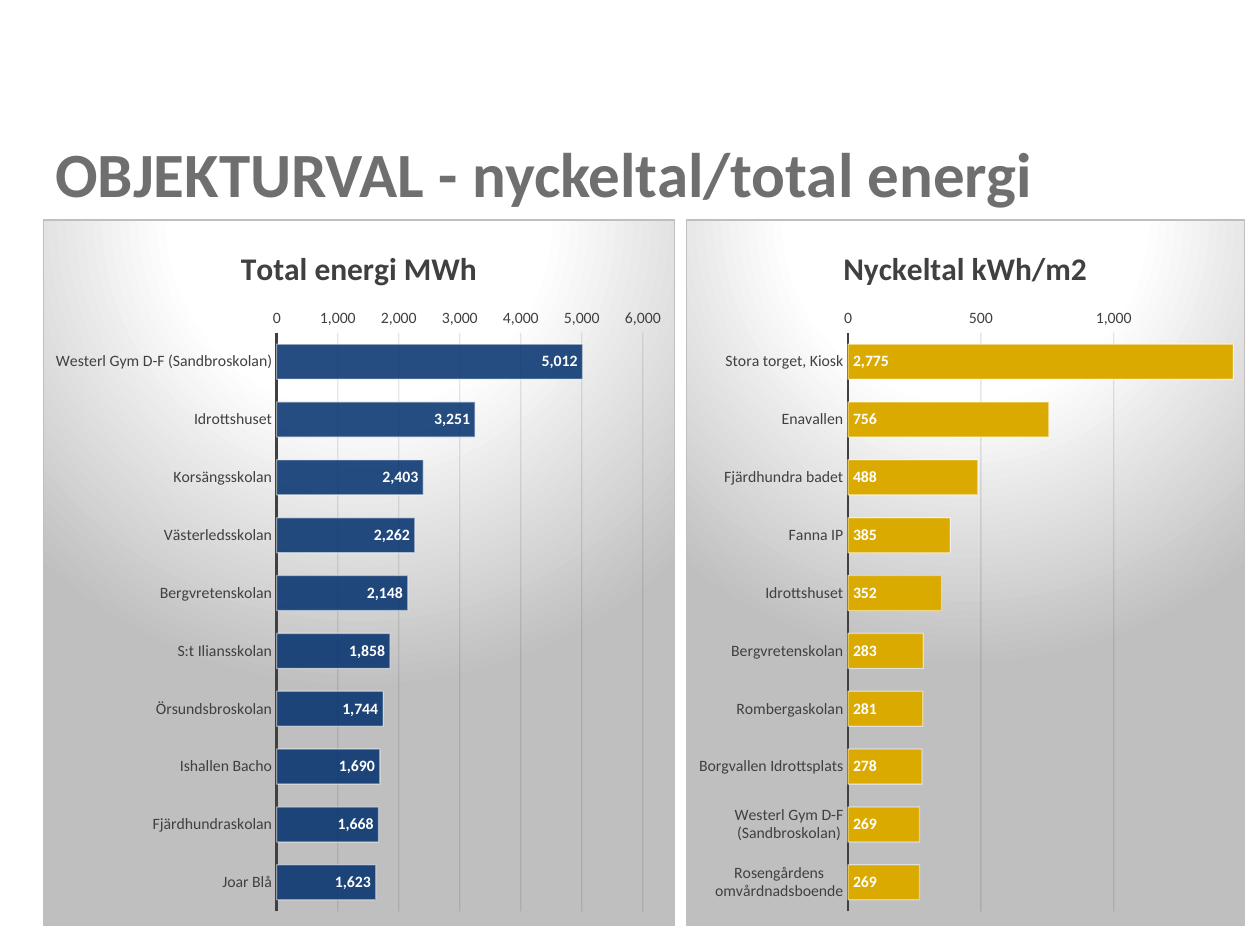
import pptx
import pptx.chart.data
import pptx.dml.color
import pptx.enum.chart
import pptx.enum.text
import pptx.oxml
import pptx.oxml.ns
import pptx.util
from lxml import etree

Cm = pptx.util.Cm
Pt = pptx.util.Pt
RGBColor = pptx.dml.color.RGBColor
qn = pptx.oxml.ns.qn

FONT = "Calibri"
TITLE_GRAY = RGBColor(0x70, 0x6F, 0x6F)
TEXT_GRAY = RGBColor(0x40, 0x40, 0x40)
GRID = RGBColor(0x0D, 0x0D, 0x0D)
PANEL_GRAY = RGBColor(0xBF, 0xBF, 0xBF)
WHITE = RGBColor(0xFF, 0xFF, 0xFF)
BLACK = RGBColor(0, 0, 0)
NAVY = RGBColor(0x00, 0x2F, 0x6C)
GOLD = RGBColor(0xDA, 0xAA, 0x00)

TOTAL_ENERGY = {
    "Westerl Gym D-F (Sandbroskolan)": 5012,
    "Idrottshuset": 3251,
    "Korsängsskolan": 2403,
    "Västerledsskolan": 2262,
    "Bergvretenskolan": 2148,
    "S:t Iliansskolan": 1858,
    "Örsundsbroskolan": 1744,
    "Ishallen Bacho": 1690,
    "Fjärdhundraskolan": 1668,
    "Joar Blå": 1623,
}
ENERGY_PER_AREA = {
    "Stora torget, Kiosk": 2775,
    "Enavallen": 756,
    "Fjärdhundra badet": 488,
    "Fanna IP": 385,
    "Idrottshuset": 352,
    "Bergvretenskolan": 283,
    "Rombergaskolan": 281,
    "Borgvallen Idrottsplats": 278,
    "Westerl Gym D-F (Sandbroskolan)": 269,
    "Rosengårdens omvårdnadsboende": 269,
}


def style_font(font, size, color, bold=False):
    font.name, font.size, font.bold = FONT, Pt(size), bold
    font.color.rgb = color


def set_alpha(color_parent, percent):
    for color in color_parent.iter(qn("a:srgbClr")):
        etree.SubElement(color, qn("a:alpha")).set("val", str(percent * 1000))


def paint_panel(chart):
    """Radial white-to-gray background with a thin border."""
    stops = "".join(
        f'<a:gs pos="{position * 1000}"><a:srgbClr val="{color}"/></a:gs>'
        for position, color in ((0, WHITE), (39, WHITE), (100, PANEL_GRAY)))
    panel = pptx.oxml.parse_xml(
        f'<c:spPr {pptx.oxml.ns.nsdecls("c", "a")}>'
        f'<a:gradFill><a:gsLst>{stops}</a:gsLst><a:path path="circle">'
        '<a:fillToRect l="50000" t="-80000" r="50000" b="180000"/></a:path></a:gradFill>'
        f'<a:ln w="{Pt(0.75)}"><a:solidFill><a:srgbClr val="{PANEL_GRAY}"/></a:solidFill></a:ln>'
        '</c:spPr>')
    chart._chartSpace.find(qn("c:chart")).addnext(panel)


def place_plot(chart, x, width, y=0.16, height=0.82):
    """Fix the inner plot area, in fractions of the chart."""
    plot_area = chart._chartSpace.find(".//" + qn("c:plotArea"))
    for old_layout in plot_area.findall(qn("c:layout")):
        plot_area.remove(old_layout)
    layout = etree.Element(qn("c:layout"))
    manual = etree.SubElement(layout, qn("c:manualLayout"))
    for tag, value in (("layoutTarget", "inner"), ("xMode", "edge"), ("yMode", "edge"),
                       ("x", x), ("y", y), ("w", width), ("h", height)):
        etree.SubElement(manual, qn(f"c:{tag}")).set("val", str(value))
    plot_area.insert(0, layout)


def add_title(slide, left, top, width, height):
    title = slide.shapes.title
    title.left, title.top, title.width, title.height = left, top, width, height
    frame = title.text_frame
    frame.text = "OBJEKTURVAL - nyckeltal/total energi"
    frame.vertical_anchor = pptx.enum.text.MSO_ANCHOR.MIDDLE
    heading = frame.paragraphs[0]
    heading.alignment = pptx.enum.text.PP_ALIGN.LEFT
    style_font(heading.font, 36, TITLE_GRAY, True)


def add_ranking(slide, box, name, values, color, label_position, plot_x, plot_width):
    data = pptx.chart.data.CategoryChartData(number_format="#,##0")
    data.categories = list(values)
    data.add_series(name, list(values.values()))
    chart = slide.shapes.add_chart(
        pptx.enum.chart.XL_CHART_TYPE.BAR_CLUSTERED, *box, data).chart
    style_font(chart.font, 10, BLACK)
    chart.has_legend = False
    paint_panel(chart)
    place_plot(chart, plot_x, plot_width)

    # Heading
    chart.has_title = True
    chart.chart_title.include_in_layout = False
    chart.chart_title.text_frame.text = name
    style_font(chart.chart_title.text_frame.paragraphs[0].font, 18, TEXT_GRAY, True)

    # Axes
    for axis in (chart.category_axis, chart.value_axis):
        axis.major_tick_mark = axis.minor_tick_mark = pptx.enum.chart.XL_TICK_MARK.NONE
        style_font(axis.tick_labels.font, 9, TEXT_GRAY)
    chart.category_axis.reverse_order = True
    chart.category_axis.format.line.color.rgb = TEXT_GRAY
    chart.category_axis.format.line.width = Pt(1.5)
    chart.value_axis.format.line.fill.background()
    chart.value_axis.tick_labels.number_format = "#,##0"
    chart.value_axis.tick_labels.number_format_is_linked = False
    grid_line = chart.value_axis.major_gridlines.format.line
    grid_line.color.rgb = GRID
    grid_line.width = Pt(0.75)
    set_alpha(chart._chartSpace.find(".//" + qn("c:majorGridlines")), 10)

    # Bars
    plot = chart.plots[0]
    plot.gap_width = 65
    plot.vary_by_categories = False
    bars = plot.series[0]
    bars.format.fill.solid()
    bars.format.fill.fore_color.rgb = color
    bars.format.line.color.rgb = WHITE
    bars.format.line.width = Pt(0.75)
    set_alpha(bars._element.find(qn("c:spPr")).find(qn("a:ln")), 50)

    # Bar values
    labels = bars.data_labels
    labels.show_value = True
    labels.position = label_position
    labels.number_format = "#,##0"
    labels.number_format_is_linked = False
    style_font(labels.font, 9, WHITE, True)
    return chart


def main():
    presentation = pptx.Presentation()
    presentation.slide_width, presentation.slide_height = Cm(25.4), Cm(19.05)
    slide = presentation.slides.add_slide(presentation.slide_layouts[5])
    left, top, height = Cm(0.86), Cm(4.42), Cm(14.25)
    positions = pptx.enum.chart.XL_LABEL_POSITION

    add_title(slide, left, Cm(2.51), Cm(23.29), Cm(1.91))

    # Energy per floor area, cut off above the axis maximum
    per_area = add_ranking(
        slide, (Cm(13.82), top, Cm(11.28), height), "Nyckeltal kWh/m2",
        ENERGY_PER_AREA, GOLD, positions.INSIDE_BASE, 0.29, 0.69)
    per_area.value_axis.minimum_scale = 0
    per_area.value_axis.maximum_scale = 1450
    per_area.value_axis.major_unit = 500

    # Total energy, with slightly transparent bars
    total = add_ranking(
        slide, (left, top, Cm(12.75), height), "Total energi MWh",
        TOTAL_ENERGY, NAVY, positions.INSIDE_END, 0.37, 0.58)
    bar_format = total.plots[0].series[0]._element.find(qn("c:spPr"))
    set_alpha(bar_format.find(qn("a:solidFill")), 85)

    presentation.save("out.pptx")


if __name__ == "__main__":
    main()
